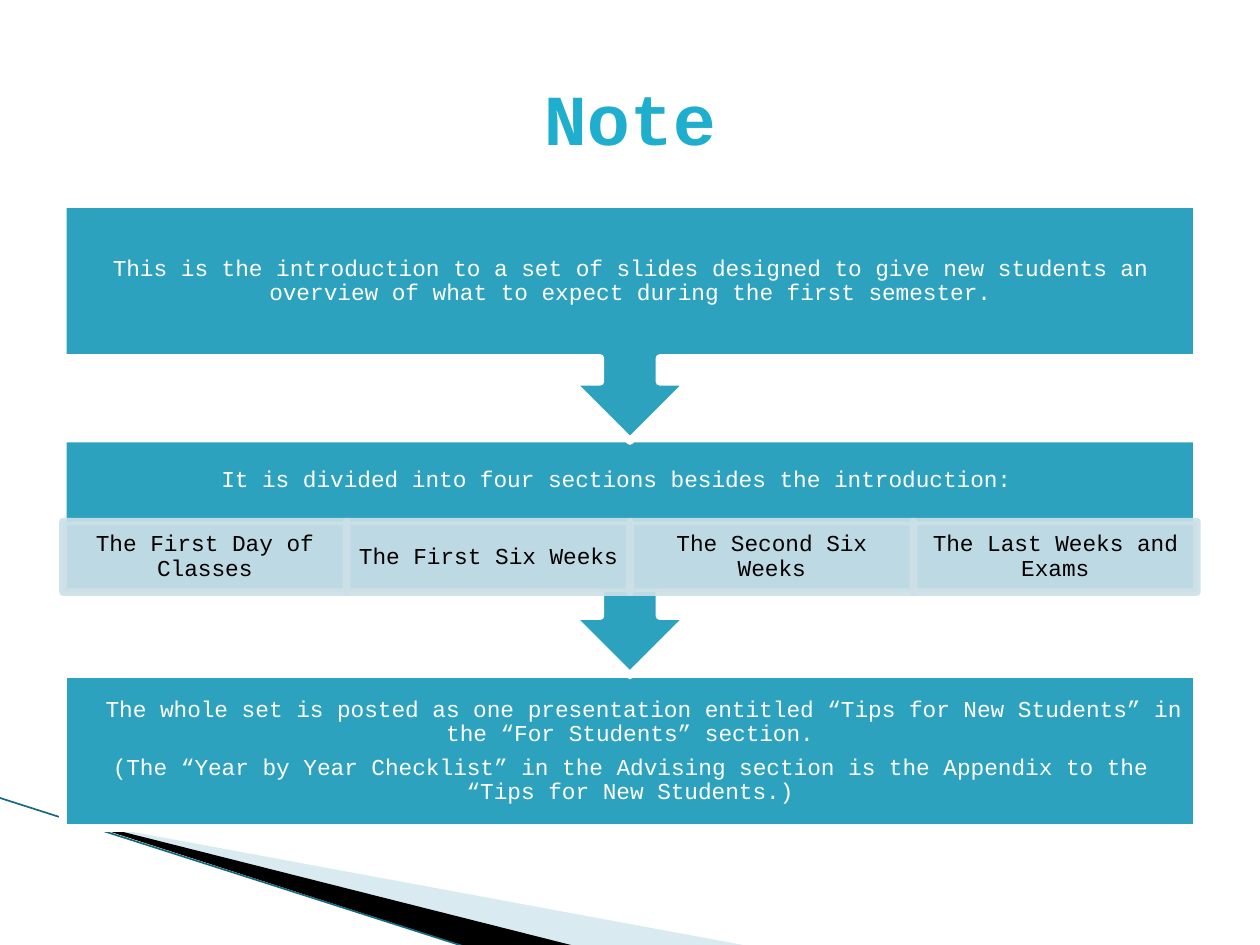
from lxml import etree
from pptx import Presentation
from pptx.dml.color import RGBColor
from pptx.enum.shapes import MSO_CONNECTOR as CONN, MSO_SHAPE as SHAPE
from pptx.enum.text import MSO_ANCHOR as ANCHOR, PP_ALIGN as ALIGN
from pptx.oxml.ns import qn
from pptx.util import Inches, Pt

TEAL = RGBColor(0x2D, 0xA2, 0xBF)
TITLE = RGBColor(0x1F, 0xAE, 0xCD)
PALE = RGBColor(0xCD, 0xE0, 0xE8)
SWOOSH = RGBColor(0xA0, 0xCB, 0xDC)
EDGE = RGBColor(0x16, 0x69, 0x7F)
WHITE = RGBColor(0xFF, 0xFF, 0xFF)
BLACK = RGBColor(0, 0, 0)
FONT = "Courier New"

INTRO = ("This is the introduction to a set of slides designed to give new "
         "students an overview of what to expect during the first semester.")
DIVIDED = "It is divided into four sections besides the introduction:"
SECTIONS = ["The First Day of Classes", "The First Six Weeks",
            "The Second Six Weeks", "The Last Weeks and Exams"]
POSTED = ("The whole set is posted as one presentation entitled “Tips for New "
          "Students” in the “For Students” section.")
APPENDIX = ("(The “Year by Year Checklist” in the Advising section is the "
            "Appendix to the “Tips for New Students.)")


def set_alpha(fill, percent):
    color = fill._xPr.find(qn("a:solidFill"))[0]
    etree.SubElement(color, qn("a:alpha"), val=str(percent * 1000))


def style_font(p, size, color, bold=False):
    for r in p.runs:
        r.font.name = FONT
        r.font.size = Pt(size)
        r.font.bold = bold
        r.font.color.rgb = color


def add_block(slide, kind, box, lines, fill, line, color, pad_y=0.1):
    sp = slide.shapes.add_shape(kind, *map(Inches, box))
    sp.shadow.inherit = False
    sp.fill.solid()
    sp.fill.fore_color.rgb = fill
    sp.line.color.rgb = line
    sp.line.width = Pt(4.33)
    tf = sp.text_frame
    tf.word_wrap = True
    tf.vertical_anchor = ANCHOR.MIDDLE
    tf.margin_left = tf.margin_right = Inches(0.1)
    tf.margin_top = tf.margin_bottom = Inches(pad_y)
    tf.text = "\n".join(lines)
    for p in tf.paragraphs:
        p.alignment = ALIGN.CENTER
        p.line_spacing = 0.9
        p.space_after = Pt(5)
        style_font(p, 13, color)
    return sp


def add_wedge(slide, points, color):
    start, *rest = [(Inches(x), Inches(y)) for x, y in points]
    builder = slide.shapes.build_freeform(*start)
    builder.add_line_segments(rest, close=True)
    sp = builder.convert_to_shape()
    sp.shadow.inherit = False
    sp.fill.solid()
    sp.fill.fore_color.rgb = color
    sp.line.fill.background()
    return sp


def add_corner(slide):
    pale = add_wedge(slide, [(0.55, 6.51), (5.95, 7.51), (4.56, 7.51)], SWOOSH)
    set_alpha(pale.fill, 40)
    add_wedge(slide, [(0.53, 6.49), (4.57, 7.51), (3.72, 7.52)], BLACK)
    line = slide.shapes.add_connector(
        CONN.STRAIGHT, Inches(-0.01), Inches(6.33), Inches(3.71), Inches(7.52))
    line.line.color.rgb = EDGE
    line.line.width = Pt(0.95)
    etree.SubElement(line._element.spPr, qn("a:effectLst"))


def add_sections(slide, left, top, width, height):
    cell_w = width / len(SECTIONS)
    for i, name in enumerate(SECTIONS):
        sp = add_block(slide, SHAPE.RECTANGLE,
                       (left + i * cell_w, top, cell_w, height),
                       [name], PALE, PALE, BLACK, 0.02)
        set_alpha(sp.fill, 90)
        set_alpha(sp.line.fill, 90)


def add_flow(slide, left, top, width):
    step, box_h, callout_h, cell_h = 1.86, 1.22, 1.88, 0.56
    tops = [top + i * step for i in range(3)]
    last = add_block(slide, SHAPE.RECTANGLE, (left, tops[2] + 0.01, width, box_h),
                     [POSTED, APPENDIX], TEAL, WHITE, WHITE)
    pPr = last.text_frame.paragraphs[0]._p.get_or_add_pPr()
    pPr.set("indent", str(Inches(0.21)))
    middle = add_block(slide, SHAPE.DOWN_ARROW_CALLOUT,
                       (left, tops[1], width, callout_h),
                       [DIVIDED], TEAL, WHITE, WHITE)
    middle.text_frame.margin_bottom = Inches(cell_h + 0.1)
    middle.text_frame.margin_right = Inches(0.32)
    add_sections(slide, left, tops[1] + box_h - cell_h, width, cell_h)
    add_block(slide, SHAPE.DOWN_ARROW_CALLOUT, (left, tops[0], width, callout_h),
              [INTRO], TEAL, WHITE, WHITE)


def set_title(slide, left, top, width, height):
    sp = slide.shapes.title
    sp.left, sp.top = Inches(left), Inches(top)
    sp.width, sp.height = Inches(width), Inches(height)
    tf = sp.text_frame
    tf.text = "Note"
    tf.vertical_anchor = ANCHOR.MIDDLE
    p = tf.paragraphs[0]
    p.alignment = ALIGN.CENTER
    style_font(p, 41, TITLE, True)


def main():
    prs = Presentation()
    prs.slide_width, prs.slide_height = Inches(10), Inches(7.5)
    slide = prs.slides.add_slide(prs.slide_layouts[5])
    add_corner(slide)
    add_flow(slide, 0.5, 1.62, 9)
    set_title(slide, 0.5, 0.3, 9, 1.25)
    prs.save("out.pptx")


if __name__ == "__main__":
    main()
